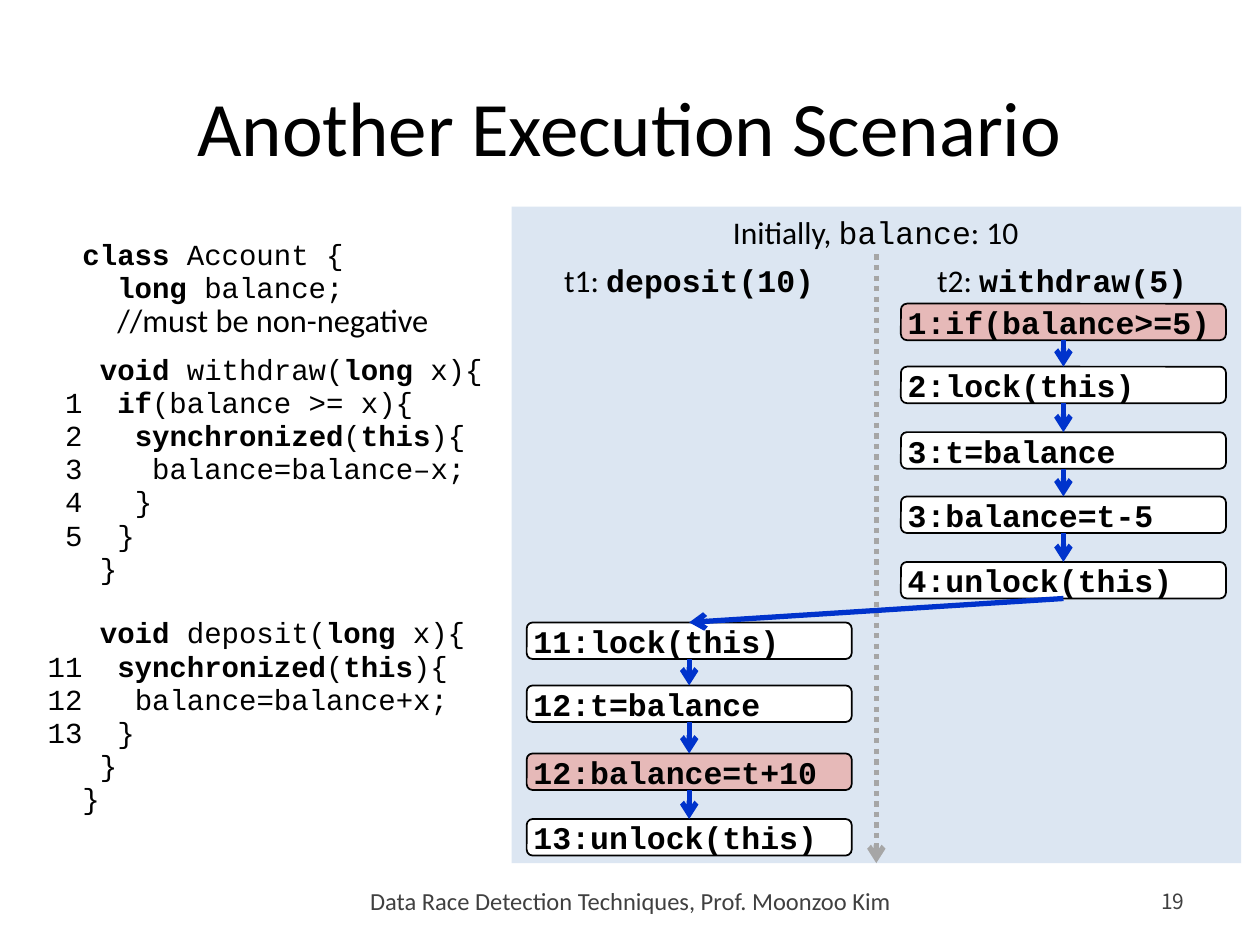
import pptx
import pptx.util
import pptx.dml.color
import pptx.enum.dml
import pptx.enum.shapes
import pptx.enum.text
import pptx.oxml.ns
from lxml import etree

Inches, Pt = pptx.util.Inches, pptx.util.Pt
RGB = pptx.dml.color.RGBColor.from_string
ALIGN = pptx.enum.text.PP_ALIGN
ANCHOR = pptx.enum.text.MSO_ANCHOR
SHAPE = pptx.enum.shapes.MSO_SHAPE


class Theme:
    ink, grey, white = "000000", "404040", "FFFFFF"
    panel, racy, flow, axis = "DCE6F2", "E6B9B8", "0033CC", "A6A6A6"
    body, mono, number = "Calibri", "Courier New", "Noto Sans CJK KR"
    title_size, step_size, code_size, note_size = 44, 18, 16.6, 18.5
    footer_size, number_size = 14, 12


# Code lines: line number, code column, code with **bold**, space before
CODE = [
    ("", 2, "**class** Account {", 1),
    ("", 4, "**long** balance;", 1),
    ("", 4, "//must be non-negative", 0),
    ("", 3, "**void** withdraw(**long** x){", 9),
    ("1", 4, "**if**(balance >= x){", 1),
    ("2", 5, "**synchronized**(**this**){", 1),
    ("3", 6, "balance=balance–x;", 1),
    ("4", 5, "}", 1),
    ("5", 4, "}", 1),
    ("", 3, "}", 1),
    ("", 3, "**void** deposit(**long** x){", 19),
    ("11", 4, "**synchronized**(**this**){", 1),
    ("12", 5, "balance=balance+x;", 1),
    ("13", 4, "}", 1),
    ("", 3, "}", 1),
    ("", 2, "}", 1),
]

# Steps of each thread: top, text, whether it takes part in the race
T1_STEPS = [(4.94, "11:lock(this)", False), (5.44, "12:t=balance", False),
            (5.98, "12:balance=t+10", True), (6.5, "13:unlock(this)", False)]
T2_STEPS = [(2.41, "1:if(balance>=5)", True), (2.91, "2:lock(this)", False),
            (3.43, "3:t=balance", False), (3.94, "3:balance=t-5", False),
            (4.46, "4:unlock(this)", False)]


def add_run(p, text, size=Theme.step_size, font=Theme.body, color=Theme.ink, bold=False):
    r = p.add_run()
    r.text = text
    r.font.size, r.font.name, r.font.bold = Pt(size), font, bold
    r.font.color.rgb = RGB(color)


def add_box(s, box, anchor=ANCHOR.MIDDLE, align=ALIGN.LEFT):
    tf = s.shapes.add_textbox(*map(Inches, box)).text_frame
    tf.word_wrap, tf.vertical_anchor = True, anchor
    tf.paragraphs[0].alignment = align
    return tf


def add_label(s, box, text, align=ALIGN.CENTER, **fmt):
    add_run(add_box(s, box, align=align).paragraphs[0], text, **fmt)


def add_heading(s, box, *parts):
    """One centred line; each part is (text, format)."""
    p = add_box(s, box, ANCHOR.TOP, ALIGN.CENTER).paragraphs[0]
    for text, fmt in parts:
        add_run(p, text, **fmt)


def add_arrow(s, color, start=(0, 0), end=(0, 0)):
    cx = s.shapes.add_connector(pptx.enum.shapes.MSO_CONNECTOR.STRAIGHT,
                                *map(Inches, (*start, *end)))
    cx.line.color.rgb, cx.line.width = RGB(color), Pt(3)
    return cx


def finish_arrow(cx):
    """Add the open head and drop the shadow."""
    etree.SubElement(cx.line._get_or_add_ln(), pptx.oxml.ns.qn("a:tailEnd"), type="arrow")
    etree.SubElement(cx._element.spPr, pptx.oxml.ns.qn("a:effectLst"))


def join(s, upper, lower):
    cx = add_arrow(s, Theme.flow)
    cx.begin_connect(upper, 2)
    cx.end_connect(lower, 0)
    finish_arrow(cx)


def add_step(s, box, text, racy):
    sp = s.shapes.add_shape(SHAPE.ROUNDED_RECTANGLE, *map(Inches, box))
    sp.shadow.inherit = False
    sp.fill.solid()
    sp.fill.fore_color.rgb = RGB(Theme.racy if racy else Theme.white)
    sp.line.color.rgb, sp.line.width = RGB(Theme.ink), Pt(1)
    tf = sp.text_frame
    tf.word_wrap, tf.vertical_anchor = True, ANCHOR.MIDDLE
    tf.margin_left = tf.margin_right = Inches(0.04)
    tf.margin_top = tf.margin_bottom = Inches(0.05)
    tf.paragraphs[0].alignment = ALIGN.LEFT
    add_run(tf.paragraphs[0], text, font=Theme.mono, bold=True)
    return sp


def add_thread(s, left, steps):
    boxes = [add_step(s, (left, top, 2.58, 0.29), text, racy) for top, text, racy in steps]
    for upper, lower in zip(boxes, boxes[1:]):
        join(s, upper, lower)
    return boxes


def add_code(s, box):
    """Code listing; every indent is a whole number of character widths."""
    tf = add_box(s, box)
    char = Pt(Theme.code_size * 0.6)
    for i, (number, column, code, before) in enumerate(CODE):
        p = tf.paragraphs[0] if i == 0 else tf.add_paragraph()
        p.line_spacing, p.space_before = 0.9, Pt(before)
        pPr = p._p.get_or_add_pPr()
        pPr.set("marL", str(column * char))
        if number:
            pPr.set("indent", str((2 - len(number) - column) * char))
            add_run(p, number + "\t", Theme.code_size, Theme.mono)
        if code.startswith("//"):
            add_run(p, code, Theme.note_size)
            continue
        for j, part in enumerate(code.split("**")):
            if part:
                add_run(p, part, Theme.code_size, Theme.mono, bold=j % 2 == 1)


def add_schedule(s, box):
    """Panel with both threads on either side of the time axis."""
    x, y, w, h = box
    panel = s.shapes.add_shape(SHAPE.RECTANGLE, *map(Inches, box))
    panel.shadow.inherit = False
    panel.fill.solid()
    panel.fill.fore_color.rgb = RGB(Theme.panel)
    panel.line.fill.background()

    # Headings
    mono, call = {"font": Theme.mono}, {"font": Theme.mono, "bold": True}
    add_heading(s, (x + 0.12, y, 5.54, 0.4),
                ("Initially, ", {}), ("balance", mono), (": 10", {}))
    add_heading(s, (x + 0.24, y + 0.38, 2.34, 0.4), ("t1: ", {}), ("deposit(10)", call))
    add_heading(s, (x + 3.2, y + 0.38, 2.34, 0.4), ("t2: ", {}), ("withdraw(5)", call))

    # Time axis
    axis = add_arrow(s, Theme.axis, (x + w / 2, y + 0.38), (x + w / 2, y + h))
    axis.line.dash_style = pptx.enum.dml.MSO_LINE.ROUND_DOT
    finish_arrow(axis)

    # Steps, then the switch from t2 to t1
    t1 = add_thread(s, x + 0.12, T1_STEPS)
    t2 = add_thread(s, x + 3.09, T2_STEPS)
    join(s, t2[-1], t1[0])


def main():
    prs = pptx.Presentation()
    prs.slide_width, prs.slide_height = Inches(10), Inches(7.5)
    s = prs.slides.add_slide(prs.slide_layouts[6])
    add_schedule(s, (4.06, 1.64, 5.79, 5.21))
    add_label(s, (0.5, 0.45, 9, 1.09), "Another Execution Scenario", size=Theme.title_size)
    add_code(s, (0.28, 1.8, 3.94, 4.78))
    # Footer
    add_label(s, (1.61, 6.95, 6.79, 0.4), "Data Race Detection Techniques, Prof. Moonzoo Kim",
              size=Theme.footer_size, color=Theme.grey)
    add_label(s, (8.94, 6.95, 0.56, 0.4), "19", align=ALIGN.RIGHT,
              size=Theme.number_size, font=Theme.number, color=Theme.grey)
    prs.save("out.pptx")


if __name__ == "__main__":
    main()
